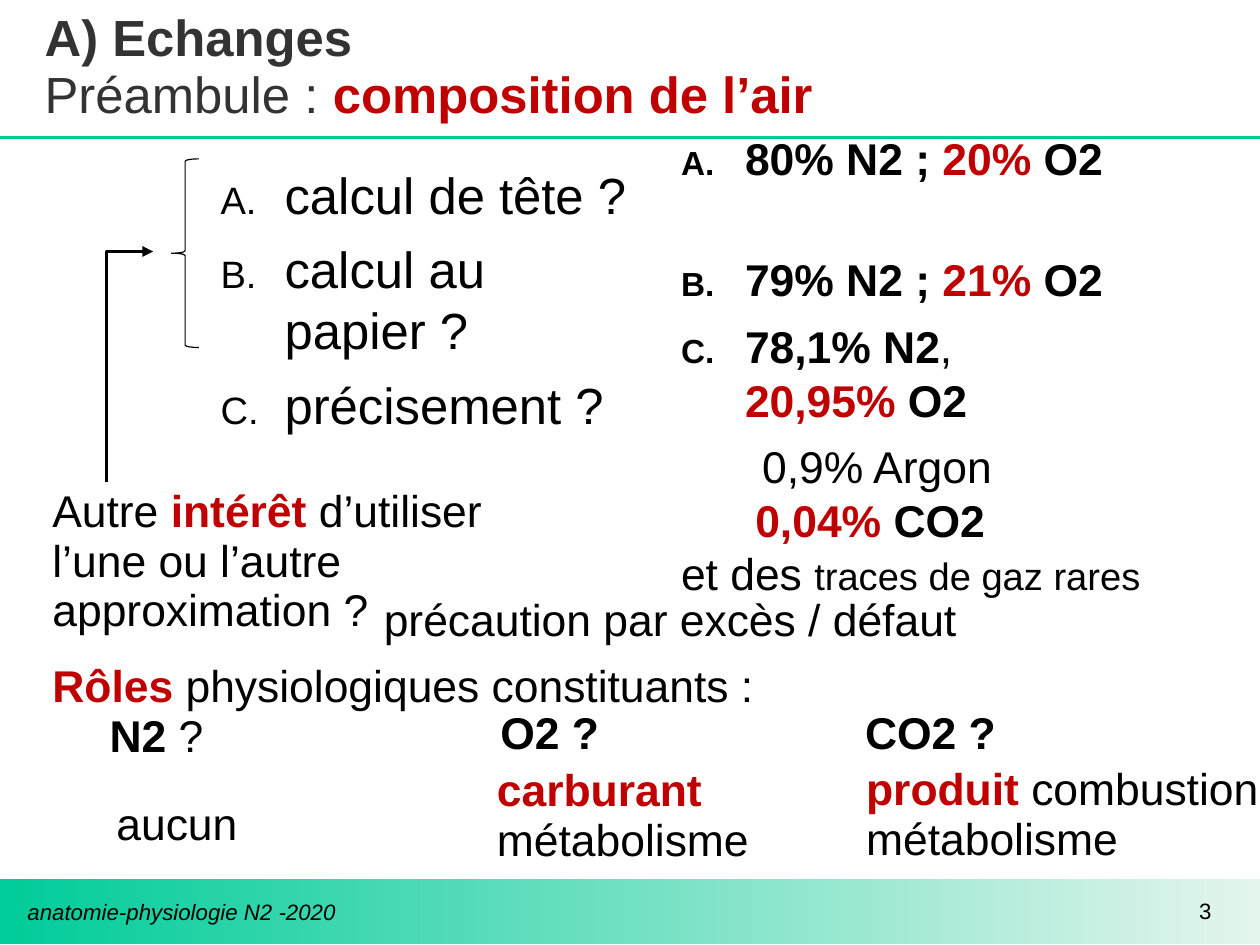
from lxml import etree
from pptx import Presentation
from pptx import util as u
from pptx.dml import color
from pptx.enum import shapes, text
from pptx.oxml import ns

BLACK, GREY, RED, GREEN, PALE = "000000", "333333", "C00000", "00CC99", "E4F5ED"
TIGHT = 0.93
LEFT, RIGHT = text.PP_ALIGN.LEFT, text.PP_ALIGN.RIGHT


def rgb(value):
    return color.RGBColor.from_string(value)


def sub(parent, tag, **attributes):
    return etree.SubElement(parent, ns.qn(tag), attributes)


def run(content, **style):
    """A piece of text with its format: size, color, bold, italic."""
    return content, style


def bold(content, **style):
    return run(content, bold=True, **style)


def red(content):
    return bold(content, color=RED)


def para(*runs, **layout):
    """A paragraph with its layout: spacing, after, margin, indent, lettered, align."""
    return runs, layout


def lettered(*runs, **layout):
    return para(*runs, margin=0.66, indent=-0.56, after=8.5, lettered=True, **layout)


class Slide:
    def __init__(self, width, height, font):
        self.deck = Presentation()
        self.deck.slide_width, self.deck.slide_height = width, height
        self.slide = self.deck.slides.add_slide(self.deck.slide_layouts[1])
        self.font = font

    def placeholder(self, index, box, paragraphs, **style):
        holder = self.slide.placeholders[index]
        holder.left, holder.top, holder.width, holder.height = map(u.Inches, box)
        self.fill_text(holder.text_frame, paragraphs, **style)

    def textbox(self, box, *paragraphs, **style):
        holder = self.slide.shapes.add_textbox(*map(u.Inches, box))
        self.fill_text(holder.text_frame, paragraphs, **style)

    def fill_text(self, frame, paragraphs, size=28, base=BLACK, inset=True,
                  anchor=text.MSO_ANCHOR.TOP):
        frame.word_wrap = True
        frame.auto_size = text.MSO_AUTO_SIZE.NONE
        frame.vertical_anchor = anchor
        frame.margin_left = frame.margin_right = u.Inches(0.1 if inset else 0)
        frame.margin_top = frame.margin_bottom = u.Inches(0.05 if inset else 0)
        for number, (runs, layout) in enumerate(paragraphs):
            paragraph = frame.add_paragraph() if number else frame.paragraphs[0]
            self.lay_out(paragraph, **layout)
            for content, style in runs:
                for line, piece in enumerate(content.split("\n")):
                    if line:
                        paragraph.add_line_break()
                    if piece:
                        self.add_run(paragraph, piece, **{"size": size, "color": base, **style})

    def add_run(self, paragraph, content, size, color, bold=False, italic=False):
        piece = paragraph.add_run()
        piece.text = content
        font = piece.font
        font.name, font.size, font.bold, font.italic = self.font, u.Pt(size), bold, italic
        font.color.rgb = rgb(color)

    def lay_out(self, paragraph, spacing=1.0, after=0, margin=0, indent=0,
                lettered=False, align=LEFT):
        paragraph.alignment = align
        paragraph.line_spacing = spacing
        paragraph.space_before, paragraph.space_after = u.Pt(0), u.Pt(after)
        properties = paragraph._p.get_or_add_pPr()
        properties.set("marL", str(u.Inches(margin)))
        properties.set("indent", str(u.Inches(indent)))
        if lettered:
            sub(sub(properties, "a:buClr"), "a:srgbClr", val=BLACK)
            sub(properties, "a:buSzPct", val="75000")
            sub(properties, "a:buFont", typeface=self.font)
            sub(properties, "a:buAutoNum", type="alphaUcPeriod")
        else:
            sub(properties, "a:buNone")

    def band(self, box, start, end):
        band = self.slide.shapes.add_shape(shapes.MSO_SHAPE.RECTANGLE, *map(u.Inches, box))
        band.shadow.inherit = False
        band.line.fill.background()
        band.fill.gradient()
        band.fill.gradient_angle = 0
        for stop, position, shade in zip(band.fill.gradient_stops, (0, 1), (start, end)):
            stop.position, stop.color.rgb = position, rgb(shade)

    def rule(self, start, end, shade, width):
        rule = self.slide.shapes.add_connector(
            shapes.MSO_CONNECTOR.STRAIGHT, *map(u.Inches, (*start, *end)))
        self.outline(rule, shade, width)
        sub(rule._element.spPr, "a:effectLst")

    def brace(self, box):
        brace = self.slide.shapes.add_shape(shapes.MSO_SHAPE.LEFT_BRACE, *map(u.Inches, box))
        brace.shadow.inherit = False
        brace.fill.background()
        self.outline(brace, BLACK, 0.75)

    def elbow_arrow(self, *points):
        start, *others = [tuple(map(u.Inches, point)) for point in points]
        builder = self.slide.shapes.build_freeform(*start)
        builder.add_line_segments(others, close=False)
        arrow = builder.convert_to_shape()
        arrow.shadow.inherit = False
        arrow.fill.background()
        self.outline(arrow, BLACK, 2.25)
        sub(arrow.line._get_or_add_ln(), "a:tailEnd", type="triangle")

    def outline(self, shape, shade, width):
        shape.line.color.rgb = rgb(shade)
        shape.line.width = u.Pt(width)


def main():
    air = Slide(u.Cm(28), u.Cm(21), "Arial")

    # Frame: footer band and title rule
    air.band((0, 7.69, 11.02, 0.57), GREEN, PALE)
    air.rule((0, 1.2), (11.02, 1.2), GREEN, 2)

    # Title
    air.placeholder(0, (0.39, 0.2, 10.24, 0.79), [
        para(bold("A) Echanges\n"), run("Préambule : "), red("composition de l’air"),
             spacing=TIGHT),
    ], size=32, base=GREY, inset=False, anchor=text.MSO_ANCHOR.MIDDLE)

    # Three levels of precision
    questions = ("calcul de tête ?", "calcul au papier ?", "précisement ?")
    air.placeholder(1, (1.73, 1.38, 3.86, 2.76),
                    [lettered(run(question)) for question in questions], size=32)
    air.brace((1.5, 1.39, 0.24, 1.65))

    # Composition for each level
    air.textbox(
        (5.76, 1.14, 5.42, 3.77),
        lettered(bold("80% N2 ;"), red(" 20% "), bold("O2"), spacing=TIGHT),
        lettered(bold("79% N2 ; "), red("21% "), bold("O2"), spacing=2.0),
        lettered(bold("78,1% N2"), run(", \n"), red("20,95%"), bold(" O2")),
        para(run("0,9% Argon"), margin=0.81),
        para(red("0,04%"), bold(" CO2"), margin=0.75),
        para(run("et des "), run("traces de gaz rares", size=24), margin=0.1))

    # Use of the approximations
    air.textbox((0.36, 4.22, 4.51, 1.42), para(
        run("Autre "), red("intérêt "),
        run("d’utiliser l’une ou l’autre approximation ?"), spacing=TIGHT))
    air.elbow_arrow((0.93, 4.22), (0.93, 2.2), (1.34, 2.2))
    air.textbox((3.26, 5.17, 7.06, 0.54),
                para(run("précaution par excès / défaut"), spacing=TIGHT))

    # Physiological roles
    air.textbox((0.36, 5.75, 6.81, 0.98),
                para(red("Rôles "), run("physiologiques constituants :"), spacing=TIGHT),
                para(bold("N2"), run(" ?"), spacing=TIGHT, margin=0.5))
    roles = [
        ((0.92, 6.96, 1.48, 0.54), [run("aucun")]),
        ((4.28, 6.16, 1.48, 0.54), [bold("O2 ?")]),
        ((4.25, 6.66, 2.56, 0.98), [red("carburant"), run(" métabolisme")]),
        ((7.47, 6.16, 1.48, 0.54), [bold("CO2 ?")]),
        ((7.48, 6.65, 3.7, 0.98), [red("produit "), run("combustion\nmétabolisme")]),
    ]
    for box, role in roles:
        air.textbox(box, para(*role, spacing=TIGHT))

    # Footer
    air.textbox((0.24, 7.88, 6.38, 0.36),
                para(run("anatomie-physiologie N2 -2020", italic=True), spacing=TIGHT),
                size=14, inset=False)
    air.textbox((8.03, 7.85, 2.57, 0.39), para(run("3"), align=RIGHT), size=14, inset=False)

    air.deck.save("out.pptx")


if __name__ == "__main__":
    main()
